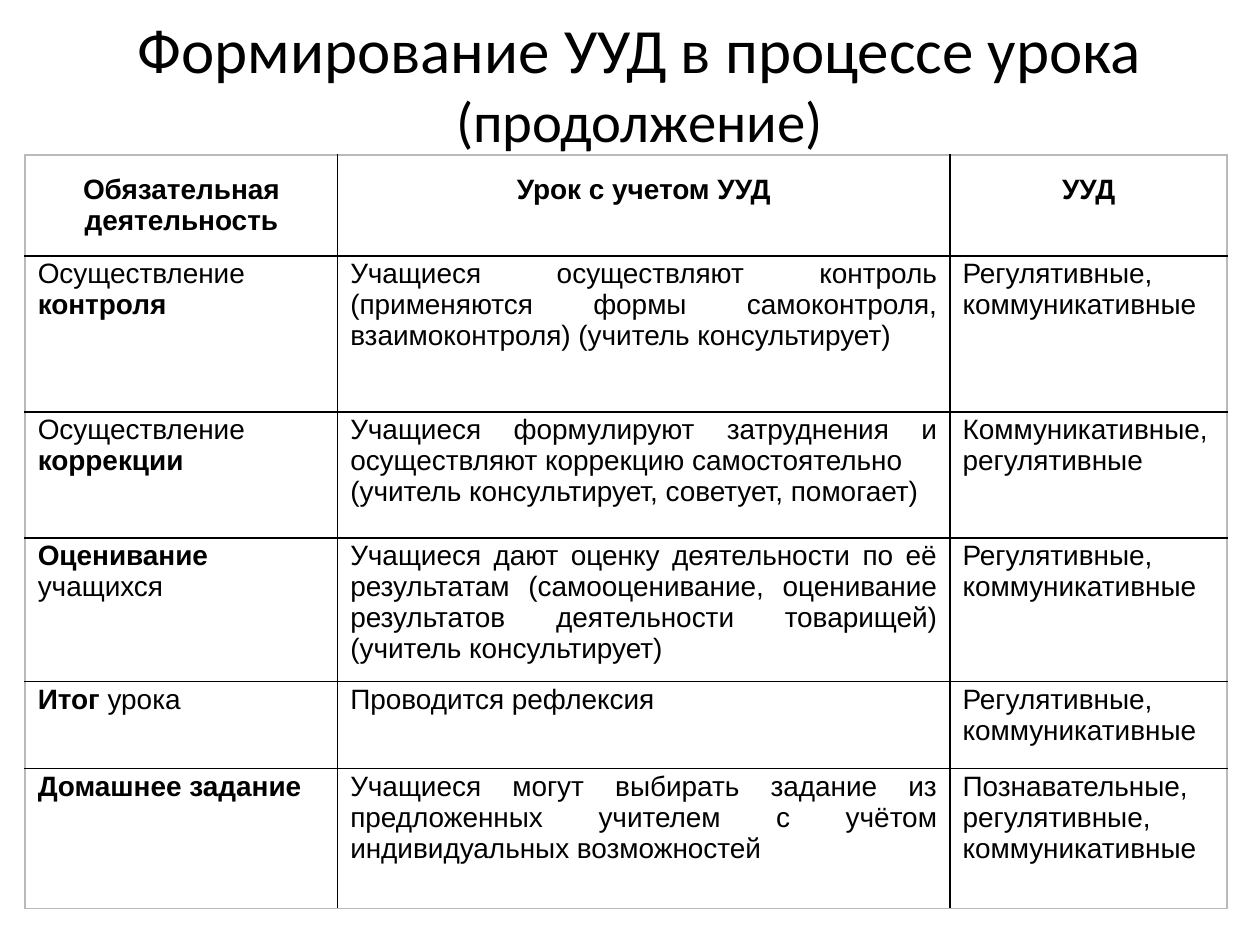
from lxml.etree import SubElement
from pptx import Presentation
from pptx.dml.color import RGBColor
from pptx.enum.text import MSO_ANCHOR as Anchor, MSO_AUTO_SIZE as AutoSize, PP_ALIGN as Align
from pptx.oxml.ns import qn
from pptx.util import Inches, Pt

WIDTH, HEIGHT = 10, 7.5
INK, FRAME, PAPER = "000000", "BABABA", "FFFFFF"

COLUMN_WIDTHS = [2.48, 4.86, 2.2]
ROW_HEIGHTS = [0.8, 1.24, 1, 1.14, 0.69, 1.11]

# A cell is a list of paragraphs, a paragraph a list of (text, bold) runs
REGULATORY = [[("Регулятивные, коммуникативные", False)]]
HEADER = [[[(label, True)]] for label in
          ("Обязательная деятельность", "Урок с учетом УУД", "УУД")]
ACTIVITIES = [
    [[[("Осуществление ", False), ("контроля", True)]],
     [[("Учащиеся осуществляют контроль (применяются формы самоконтроля, "
        "взаимоконтроля) (учитель консультирует)", False)]],
     REGULATORY],
    [[[("Осуществление ", False), ("коррекции", True)]],
     [[("Учащиеся формулируют затруднения и осуществляют коррекцию "
        "самостоятельно", False)],
      [("(учитель консультирует, советует, помогает)", False)]],
     [[("Коммуникативные, регулятивные", False)]]],
    [[[("Оценивание", True), (" учащихся", False)]],
     [[("Учащиеся дают оценку деятельности по её результатам "
        "(самооценивание, оценивание результатов деятельности товарищей) "
        "(учитель консультирует)", False)]],
     REGULATORY],
    [[[("Итог", True), (" урока", False)]],
     [[("Проводится рефлексия", False)]],
     REGULATORY],
    [[[("Домашнее задание", True)]],
     [[("Учащиеся могут выбирать задание из предложенных учителем с учётом "
        "индивидуальных возможностей", False)]],
     [[("Познавательные, регулятивные, коммуникативные", False)]]],
]


def rgb(code):
    return RGBColor.from_string(code)


class LessonSlide:
    """Holds the style and the slide being filled."""

    title_font, table_font, table_size = "Calibri", "Arial", 16
    body_aligns = [Align.LEFT, Align.JUSTIFY, Align.LEFT]

    def __init__(self, deck):
        self.slide = deck.slides.add_slide(deck.slide_layouts[5])

    def add_run(self, paragraph, text, font, size, bold=False):
        run = paragraph.add_run()
        run.text = text
        run.font.name, run.font.size, run.font.bold = font, Pt(size), bold
        run.font.color.rgb = rgb(INK)

    def title(self, left, top, width, height, parts):
        heading = self.slide.shapes.title
        heading.left, heading.top = Inches(left), Inches(top)
        heading.width, heading.height = Inches(width), Inches(height)
        frame = heading.text_frame
        frame.word_wrap, frame.auto_size = True, AutoSize.NONE
        frame.vertical_anchor = Anchor.MIDDLE
        paragraph = frame.paragraphs[0]
        paragraph.alignment = Align.CENTER
        for text, size in parts:
            self.add_run(paragraph, text, self.title_font, size)

    def borders(self, cell, colors):
        properties = cell._tc.get_or_add_tcPr()
        for position, (side, color) in enumerate(colors.items()):
            line = SubElement(properties, qn(f"a:ln{side}"), w=str(Pt(1)))
            fill = SubElement(line, qn("a:solidFill"))
            SubElement(fill, qn("a:srgbClr"), val=color)
            properties.insert(position, line)

    def fill_cell(self, cell, paragraphs, align, inset_x, inset_y):
        cell.fill.solid()
        cell.fill.fore_color.rgb = rgb(PAPER)
        cell.margin_left = cell.margin_right = Inches(inset_x)
        cell.margin_top = cell.margin_bottom = Inches(inset_y)
        cell.vertical_anchor = Anchor.TOP
        frame = cell.text_frame
        for index, runs in enumerate(paragraphs):
            paragraph = frame.add_paragraph() if index else frame.paragraphs[0]
            paragraph.alignment = align
            for text, bold in runs:
                self.add_run(paragraph, text, self.table_font, self.table_size, bold)

    def table(self, left, top, widths, heights, rows):
        table = self.slide.shapes.add_table(
            len(heights), len(widths), Inches(left), Inches(top),
            Inches(sum(widths)), Inches(sum(heights))).table
        table.first_row = table.horz_banding = False
        for column, width in zip(table.columns, widths):
            column.width = Inches(width)
        for row, height in zip(table.rows, heights):
            row.height = Inches(height)
        last_row, last_column = len(heights) - 1, len(widths) - 1
        for r, row in enumerate(rows):
            for c, paragraphs in enumerate(row):
                cell = table.cell(r, c)
                align = self.body_aligns[c] if r else Align.CENTER
                insets = (0.1, 0.02) if r else (0.11, 0.15)
                self.fill_cell(cell, paragraphs, align, *insets)
                # Grey outer frame, black inner rules
                outer = {"L": c == 0, "R": c == last_column,
                         "T": r == 0, "B": r == last_row}
                self.borders(cell, {side: FRAME if edge else INK
                                    for side, edge in outer.items()})


def main():
    deck = Presentation()
    deck.slide_width, deck.slide_height = Inches(WIDTH), Inches(HEIGHT)
    lesson = LessonSlide(deck)

    # Heading
    lesson.title(0.35, 0.21, 9.45, 0.88,
                 [("Формирование УУД в процессе урока ", 36), ("(продолжение)", 32.4)])

    # Activities and the skills they form
    lesson.table(0.2, 1.23, COLUMN_WIDTHS, ROW_HEIGHTS, [HEADER, *ACTIVITIES])

    deck.save("out.pptx")


if __name__ == "__main__":
    main()
